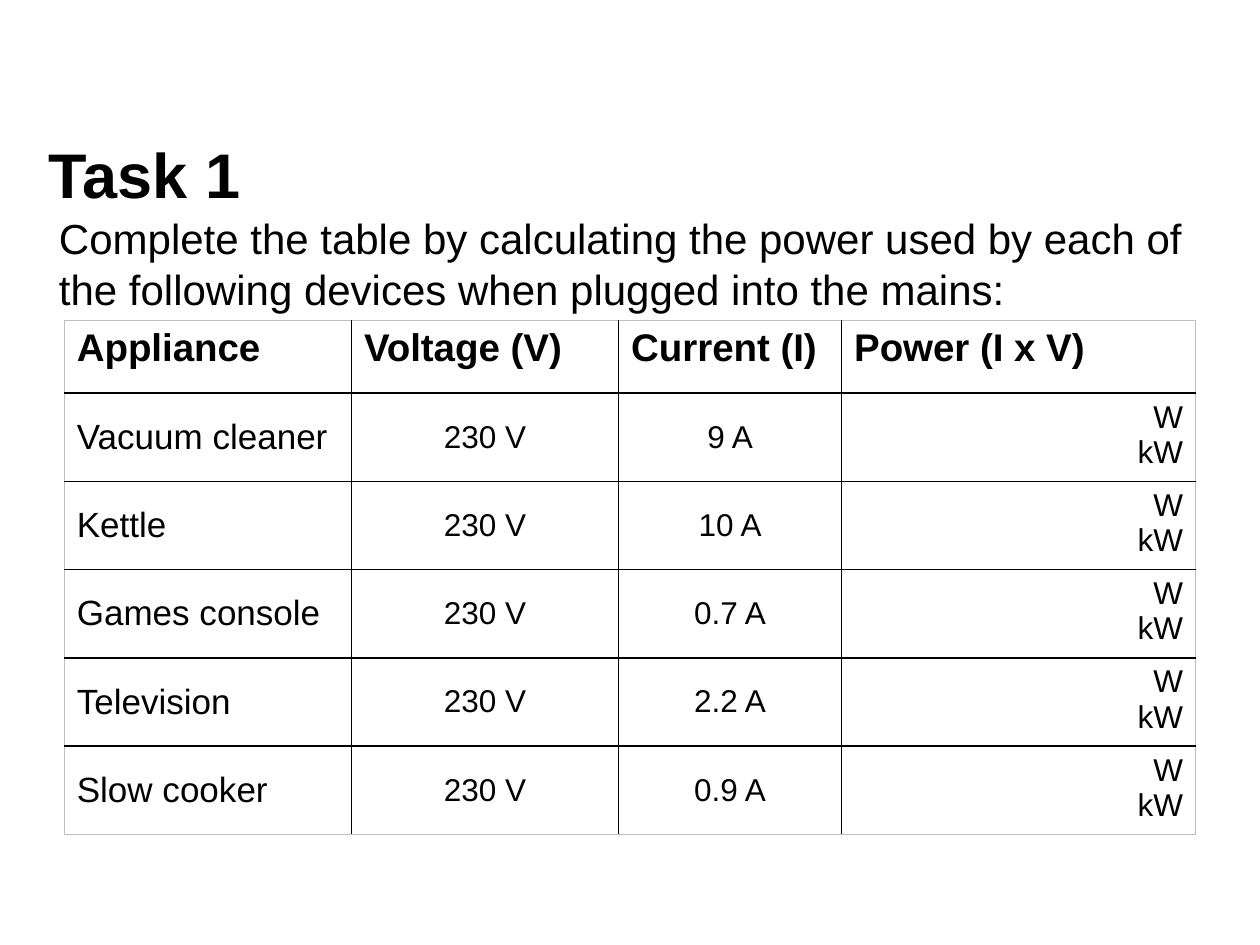
from lxml import etree
from pptx import Presentation
from pptx.dml.color import RGBColor
from pptx.enum.text import MSO_ANCHOR, PP_ALIGN
from pptx.oxml.ns import qn
from pptx.util import Inches, Pt

TOP, MIDDLE = MSO_ANCHOR.TOP, MSO_ANCHOR.MIDDLE
LEFT, CENTER, RIGHT = PP_ALIGN.LEFT, PP_ALIGN.CENTER, PP_ALIGN.RIGHT


def color(code):
    return RGBColor.from_string(code)


class Page:
    font = "Arial"
    ink = "000000"
    edge = "BFBFBF"

    def __init__(self, deck):
        self.slide = deck.slides.add_slide(deck.slide_layouts[6])

    def fill_text(self, frame, lines, size, bold=False, align=LEFT, space=1.0):
        for i, line in enumerate(lines):
            para = frame.add_paragraph() if i else frame.paragraphs[0]
            para.alignment = align
            para.line_spacing = space
            run = para.add_run()
            run.text = line
            run.font.name = self.font
            run.font.size = Pt(size)
            run.font.bold = bold
            run.font.color.rgb = color(self.ink)

    def text(self, place, line, size, bold=False, anchor=TOP, space=1.0):
        box = self.slide.shapes.add_textbox(*map(Inches, place))
        frame = box.text_frame
        frame.word_wrap = True
        frame.vertical_anchor = anchor
        self.fill_text(frame, [line], size, bold, space=space)

    def border(self, cell, outer):
        props = cell._tc.get_or_add_tcPr()
        for side in "LRTB":
            code, width = (self.edge, 0.5) if side in outer else (self.ink, 1)
            line = etree.SubElement(props, qn(f"a:ln{side}"), w=str(Pt(width)))
            fill = etree.SubElement(line, qn("a:solidFill"))
            etree.SubElement(fill, qn("a:srgbClr"), val=code)

    def table(self, place, widths, heights, rows, head, body):
        shape = self.slide.shapes.add_table(
            len(rows), len(widths), *map(Inches, place))
        grid = shape.table
        grid.first_row = grid.horz_banding = False
        for col, width in zip(grid.columns, widths):
            col.width = Inches(width)
        for row, height in zip(grid.rows, heights):
            row.height = Inches(height)
        for r, row in enumerate(rows):
            for c, lines in enumerate(row):
                size, bold, align, anchor = body[c] if r else head
                cell = grid.cell(r, c)
                outer = [side for side, hit in (
                    ("L", c == 0), ("R", c == len(widths) - 1),
                    ("T", r == 0), ("B", r == len(rows) - 1)) if hit]
                self.border(cell, outer)
                cell.fill.background()
                cell.vertical_anchor = anchor
                self.fill_text(cell.text_frame, lines, size, bold, align)


def main():
    deck = Presentation()
    deck.slide_width, deck.slide_height = Inches(10), Inches(7.5)
    page = Page(deck)
    page.text((0.29, 1.04, 5.42, 0.74), "Task 1", 36, True, MIDDLE, 0.9)
    page.text((0.37, 1.64, 9.46, 0.91),
              "Complete the table by calculating the power used by each of "
              "the following devices when plugged into the mains:", 24)

    loads = [("Vacuum cleaner", "9 A"), ("Kettle", "10 A"),
             ("Games console", "0.7 A"), ("Television", "2.2 A"),
             ("Slow cooker", "0.9 A")]
    names = ["Appliance", "Voltage (V)", "Current (I)", "Power (I x V)"]
    rows = [[[name] for name in names]]
    rows += [[[name], ["230 V"], [amps], ["W", "kW"]] for name, amps in loads]
    value = (18, False, CENTER, MIDDLE)
    page.table((0.51, 2.54, 8.98, 4.08), [2.28, 2.12, 1.77, 2.81],
               [0.58] + [0.7] * len(loads), rows,
               head=(22, True, LEFT, TOP),
               body=[(20, False, LEFT, MIDDLE), value, value,
                     (18, False, RIGHT, TOP)])
    deck.save("out.pptx")


if __name__ == "__main__":
    main()
